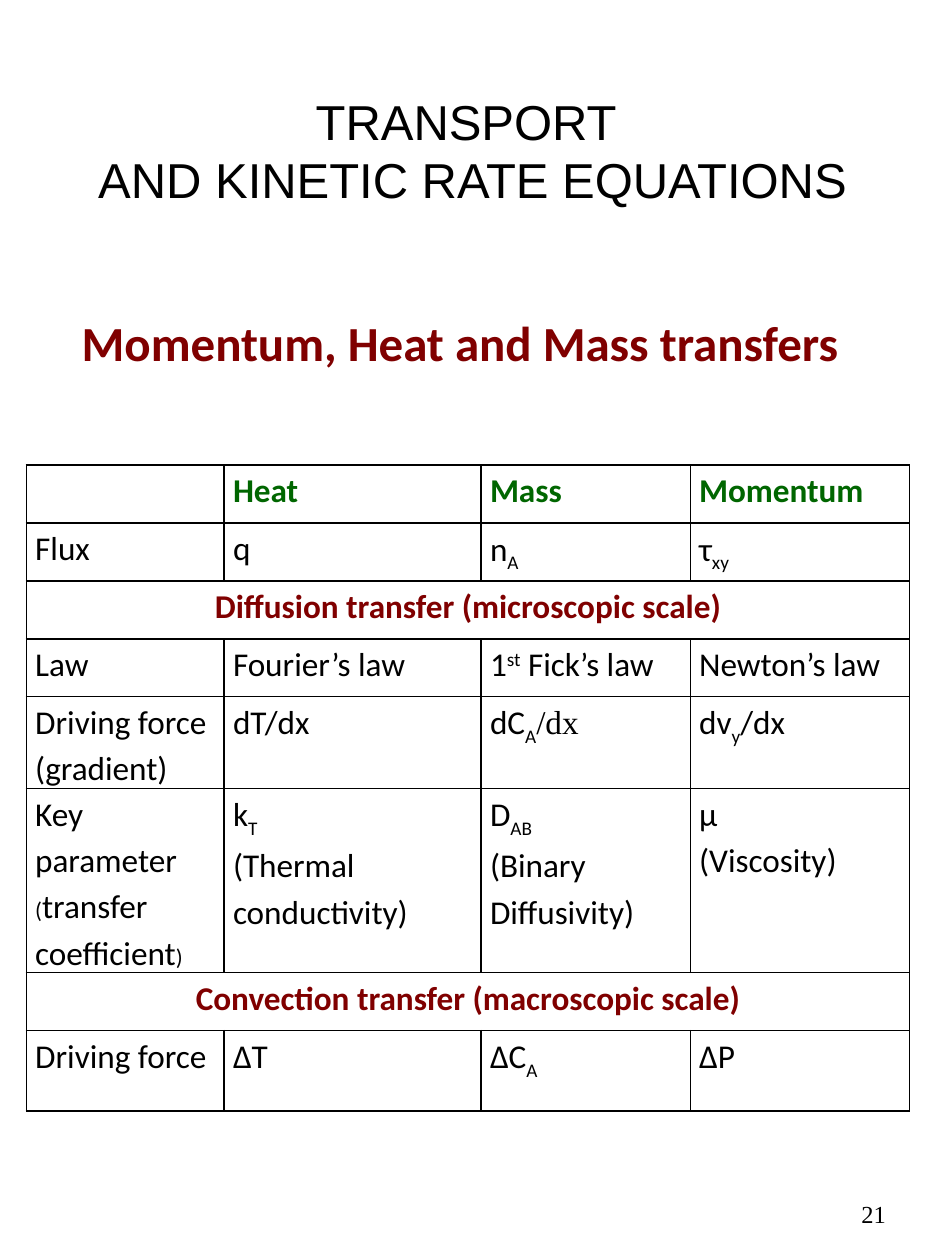
"""Build a slide that compares heat, mass and momentum transfer."""
from lxml.etree import SubElement
from pptx import Presentation
from pptx.dml.color import RGBColor
from pptx.enum.text import MSO_ANCHOR, PP_ALIGN
from pptx.oxml.ns import qn
from pptx.util import Inches, Pt

HUES = {"ink": "000000", "red": "800000", "green": "006600"}
SANS, SERIF = "Calibri", "Times New Roman"
COLS = [1.57, 2.04, 1.66, 1.74]
TALL = [0.46, 0.46, 0.46, 0.46, 0.73, 1.46, 0.46, 0.64]
BASE = {"_": "-25000", "^": "30000"}
KEY_ROW = 5
ROWS = [
    ["", "Heat", "Mass", "Momentum"],
    ["Flux", "q", "n|_A", "τ|_xy"],
    ["Diffusion transfer (microscopic scale)"],
    ["Law", "Fourier’s law", "1|^st| Fick’s law", "Newton’s law"],
    ["Driving force\n(gradient)", "dT/dx", "dC|_A|=/dx", "dv|_y|/dx"],
    ["Key parameter\n~(|transfer|~ |coefficient|~)",
     "k|_T\n(Thermal conductivity)",
     "D|_AB \v|(Binary Diffusivity)", "µ\n(Viscosity)"],
    ["Convection transfer (macroscopic scale)"],
    ["Driving force", "∆T", "∆C|_A", "∆P"],
]


def style(para, size, face, hue="ink", bold=False, align=PP_ALIGN.LEFT):
    """Set the font and alignment of a paragraph."""
    para.alignment = align
    font = para.font
    font.size, font.name, font.bold = Pt(size), face, bold
    font.color.rgb = RGBColor.from_string(HUES[hue])


def place(shape, left, top, width, height):
    """Move and size a shape."""
    shape.left, shape.top = Inches(left), Inches(top)
    shape.width, shape.height = Inches(width), Inches(height)


def add_label(slide, text, box, anchor, *look, **more):
    """Add a text box with one styled paragraph."""
    frame = slide.shapes.add_textbox(*map(Inches, box)).text_frame
    frame.word_wrap, frame.vertical_anchor = True, anchor
    frame.text = text
    style(frame.paragraphs[0], *look, **more)


def add_run(para, part):
    """Add a run; a leading _ ^ ~ = means sub, super, small or serif."""
    mark = part[:1] if part[:1] in ("_", "^", "~", "=") else ""
    text = part[len(mark):]
    run = para.add_run()
    run.text = text.rstrip("\v")
    if mark in BASE:
        run.font._element.set("baseline", BASE[mark])
    elif mark == "~":
        run.font.size = Pt(13)
    elif mark == "=":
        run.font.name = SERIF
    if text.endswith("\v"):
        para.add_line_break()


def add_edges(cell):
    """Draw a thin black line on each side of a cell."""
    props = cell._tc.get_or_add_tcPr()
    for side in ("a:lnL", "a:lnR", "a:lnT", "a:lnB"):
        line = SubElement(props, qn(side), w=str(Pt(1)))
        fill = SubElement(line, qn("a:solidFill"))
        SubElement(fill, qn("a:srgbClr"), val=HUES["ink"])


def fill_cell(cell, text, hue, bold, align):
    """Write marked-up text into a cell."""
    frame = cell.text_frame
    for i, line in enumerate(text.split("\n")):
        para = frame.add_paragraph() if i else frame.paragraphs[0]
        para.line_spacing = 1.15
        style(para, 19, SANS, hue, bold, align)
        for part in filter(None, line.split("|")):
            add_run(para, part)


def add_grid(slide):
    """Add the table of fluxes, laws and driving forces."""
    box = map(Inches, (0.21, 3.69, sum(COLS), sum(TALL)))
    table = slide.shapes.add_table(len(TALL), len(COLS), *box).table
    table.first_row = table.horz_banding = False
    for col, width in zip(table.columns, COLS):
        col.width = Inches(width)
    for row, height in zip(table.rows, TALL):
        row.height = Inches(height)
    for cell in table.iter_cells():
        add_edges(cell)
        cell.fill.background()
        cell.margin_left = cell.margin_right = Inches(0.07)
        cell.margin_top = cell.margin_bottom = 0
    for r, texts in enumerate(ROWS):
        band = len(texts) == 1
        hue = "red" if band else "ink" if r else "green"
        align = PP_ALIGN.LEFT if r == KEY_ROW else PP_ALIGN.JUSTIFY
        if band:
            align = PP_ALIGN.CENTER
            table.cell(r, 0).merge(table.cell(r, len(COLS) - 1))
        for c, text in enumerate(texts):
            fill_cell(table.cell(r, c), text, hue, band or r == 0, align)


def main():
    """Build and save the slide."""
    deck = Presentation()
    deck.slide_width, deck.slide_height = Inches(7.5), Inches(10)
    slide = deck.slides.add_slide(deck.slide_layouts[5])
    title = slide.shapes.title
    place(title, 0.56, 0.67, 6.38, 1.04)
    title.text_frame.text = "TRANSPORT \vAND KINETIC RATE EQUATIONS"
    style(title.text_frame.paragraphs[0], 28, "Arial", align=PP_ALIGN.CENTER)
    add_label(slide, "Momentum, Heat and Mass transfers",
              (0.36, 2.43, 6.58, 0.57), MSO_ANCHOR.TOP,
              28, SANS, "red", bold=True, align=PP_ALIGN.CENTER)
    add_grid(slide)
    add_label(slide, "21", (5.38, 9.11, 1.75, 0.69), MSO_ANCHOR.BOTTOM,
              14, SERIF, align=PP_ALIGN.RIGHT)
    deck.save("out.pptx")


if __name__ == "__main__":
    main()
